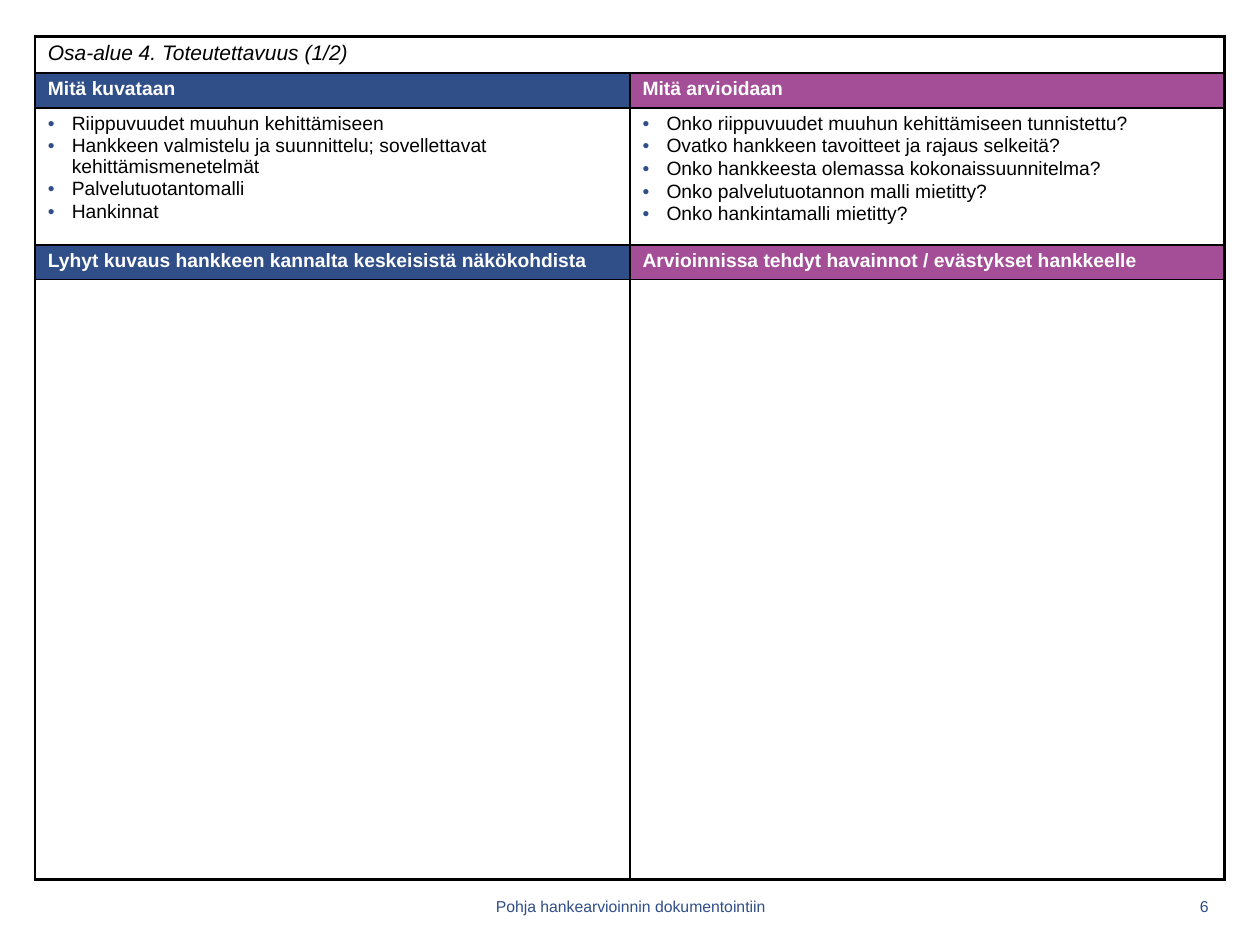
import dataclasses

import pptx
import pptx.dml.color
import pptx.enum.text
import pptx.oxml.ns
import pptx.util
from lxml import etree

WIDE, HIGH = 10, 7.5
BLUE, PLUM, BLACK, WHITE = "304E88", "A34E96", "000000", "FFFFFF"
ROWS = [0.28, 0.27, 1.09, 0.27, 4.76]
LEFT, TOP, COL = 0.28, 0.29, 4.72
INDENT = 0.19
THICK, THIN = 1.5, 1
ALIGN = pptx.enum.text.PP_ALIGN
inch = pptx.util.Inches


@dataclasses.dataclass
class Cell:
    row: int
    col: int
    lines: tuple = ()
    fill: str = WHITE
    color: str = BLACK
    size: float = 11
    bold: bool = False
    slant: bool = False
    dots: bool = False


def paint(code: str):
    return pptx.dml.color.RGBColor.from_string(code)


def add(parent, tag: str, **attrs):
    return etree.SubElement(parent, pptx.oxml.ns.qn(tag), attrs)


def write(frame, lines, *, size=11, color=BLACK, bold=False, slant=False,
          dots=False, align=ALIGN.LEFT, pitch=0.95) -> None:
    for i, line in enumerate(lines):
        para = frame.paragraphs[0] if i == 0 else frame.add_paragraph()
        para.alignment = align
        para.line_spacing = pitch
        if i:
            para.space_before = pptx.util.Pt(1.3)
        if dots:
            props = para._p.get_or_add_pPr()
            props.set("marL", str(inch(INDENT)))
            props.set("indent", str(-inch(INDENT)))
            add(add(props, "a:buClr"), "a:srgbClr", val=BLUE)
            add(props, "a:buFont", typeface="Arial")
            add(props, "a:buChar", char="•")
        run = para.add_run()
        run.text = line
        font = run.font
        font.name, font.size = "Arial", pptx.util.Pt(size)
        font.bold, font.italic = bold, slant
        font.color.rgb = paint(color)


def edge(cell, row: int, col: int, span: int = 1) -> None:
    """Thick lines on the rim of the table, thin ones inside."""
    props = cell._tc.get_or_add_tcPr()
    rims = {"L": col == 0, "R": col + span == 2,
            "T": row == 0, "B": row == len(ROWS) - 1}
    for i, (side, rim) in enumerate(rims.items()):
        line = etree.Element(pptx.oxml.ns.qn(f"a:ln{side}"),
                             w=str(pptx.util.Pt(THICK if rim else THIN)))
        add(add(line, "a:solidFill"), "a:srgbClr", val=BLACK)
        props.insert(i, line)


def draw(table, item: Cell) -> None:
    cell = table.cell(item.row, item.col)
    cell.fill.solid()
    cell.fill.fore_color.rgb = paint(item.fill)
    edge(cell, item.row, item.col, 2 if item.row == 0 else 1)
    write(cell.text_frame, item.lines, size=item.size, color=item.color,
          bold=item.bold, slant=item.slant, dots=item.dots)


def foot(slide, text: str, left: float, width: float, align) -> None:
    box = slide.shapes.add_textbox(inch(left), inch(7.03), inch(width), inch(0.32))
    frame = box.text_frame
    frame.word_wrap = True
    frame.vertical_anchor = pptx.enum.text.MSO_ANCHOR.MIDDLE
    write(frame, [text], size=9, color=BLUE, align=align, pitch=1.0)


def head(row: int, col: int, text: str) -> Cell:
    return Cell(row, col, (text,), (BLUE, PLUM)[col], WHITE, bold=True)


CELLS = [
    Cell(0, 0, ("Osa-alue 4. Toteutettavuus (1/2)",), size=12, slant=True),
    head(1, 0, "Mitä kuvataan"),
    head(1, 1, "Mitä arvioidaan"),
    Cell(2, 0, (
        "Riippuvuudet muuhun kehittämiseen",
        "Hankkeen valmistelu ja suunnittelu; sovellettavat kehittämismenetelmät",
        "Palvelutuotantomalli",
        "Hankinnat",
    ), dots=True),
    Cell(2, 1, (
        "Onko riippuvuudet muuhun kehittämiseen tunnistettu?",
        "Ovatko hankkeen tavoitteet ja rajaus selkeitä?",
        "Onko hankkeesta olemassa kokonaissuunnitelma?",
        "Onko palvelutuotannon malli mietitty?",
        "Onko hankintamalli mietitty?",
    ), dots=True),
    head(3, 0, "Lyhyt kuvaus hankkeen kannalta keskeisistä näkökohdista"),
    head(3, 1, "Arvioinnissa tehdyt havainnot / evästykset hankkeelle"),
    Cell(4, 0),
    Cell(4, 1),
]


def main() -> None:
    deck = pptx.Presentation()
    deck.slide_width, deck.slide_height = inch(WIDE), inch(HIGH)
    slide = deck.slides.add_slide(deck.slide_layouts[6])

    # Footer
    foot(slide, "6", 9.17, 0.52, ALIGN.RIGHT)
    foot(slide, "Pohja hankearvioinnin dokumentointiin", 3.42, 3.17, ALIGN.CENTER)

    # Review form
    table = slide.shapes.add_table(len(ROWS), 2, inch(LEFT), inch(TOP),
                                   inch(2 * COL), inch(sum(ROWS))).table
    table.first_row = table.horz_banding = False
    for col in table.columns:
        col.width = inch(COL)
    for row, height in zip(table.rows, ROWS):
        row.height = inch(height)
    table.cell(0, 0).merge(table.cell(0, 1))
    for item in CELLS:
        draw(table, item)

    deck.save("out.pptx")


if __name__ == "__main__":
    main()
